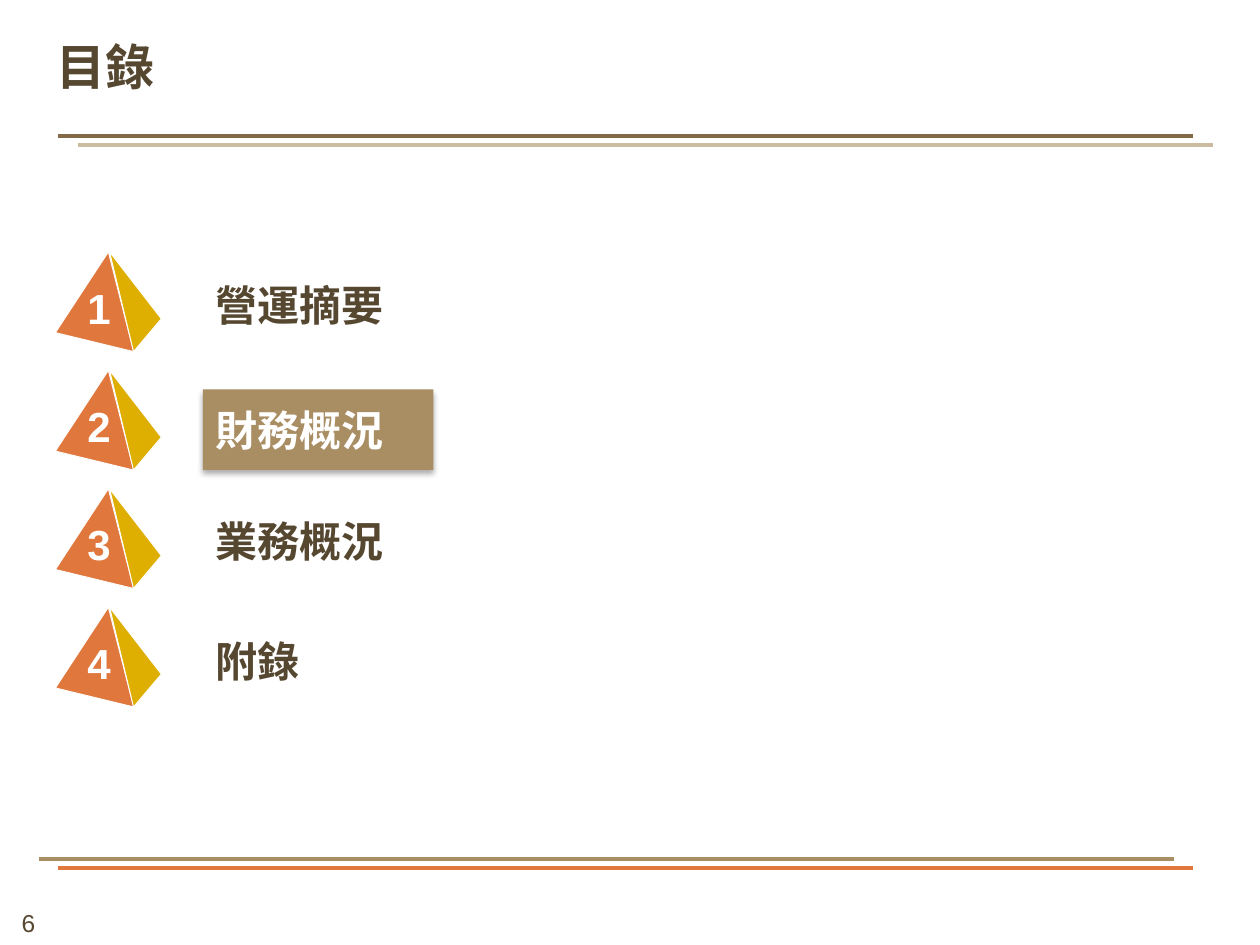
from lxml.etree import SubElement
from pptx import Presentation
from pptx.dml.color import RGBColor
from pptx.enum.shapes import MSO_CONNECTOR, MSO_SHAPE
from pptx.enum.text import MSO_ANCHOR, MSO_AUTO_SIZE, PP_ALIGN
from pptx.oxml.ns import qn
from pptx.util import Inches, Pt

DARK, TAN, ORANGE, GOLD, WHITE = "564730", "A98D63", "E0773C", "DEAE00", "FFFFFF"
CHINESE, LATIN = "Noto Sans CJK SC", "Arial"


def color(value):
    """Return the colour for a hex string."""
    return RGBColor.from_string(value)


class AgendaSlide:
    """Hold the agenda style and the slide being built."""

    def __init__(self, deck):
        """Add a slide with a title placeholder."""
        self.slide = deck.slides.add_slide(deck.slide_layouts[5])
        self.shapes = self.slide.shapes

    def set_text(self, shape, text, size, ink, font=CHINESE, bold=True,
                 align=PP_ALIGN.LEFT, anchor=MSO_ANCHOR.MIDDLE, margins=(0, 0), spacing=None):
        """Put one formatted paragraph into a shape."""
        frame = shape.text_frame
        frame.auto_size = MSO_AUTO_SIZE.NONE
        frame.word_wrap = True
        frame.vertical_anchor = anchor
        frame.margin_left = frame.margin_right = Inches(margins[0])
        frame.margin_top = frame.margin_bottom = Inches(margins[1])
        paragraph = frame.paragraphs[0]
        paragraph.text = text
        paragraph.alignment = align
        paragraph.line_spacing = spacing
        paragraph.font.size = Pt(size)
        paragraph.font.bold = bold
        paragraph.font.name = font
        paragraph.font.color.rgb = color(ink)
        properties = paragraph._p.pPr.find(qn("a:defRPr"))
        SubElement(properties, qn("a:ea")).set("typeface", font)

    def title(self, text):
        """Place and fill the title."""
        title = self.shapes.title
        title.left, title.top = Inches(0.45), Inches(0.25)
        title.width, title.height = Inches(9.41), Inches(0.51)
        self.set_text(title, text, 28, DARK, anchor=MSO_ANCHOR.BOTTOM, spacing=Pt(40))

    def rule(self, left, top, ink):
        """Draw a horizontal rule."""
        line = self.shapes.add_connector(
            MSO_CONNECTOR.STRAIGHT, Inches(left), Inches(top), Inches(left + 9.01), Inches(top))
        line.line.color.rgb = color(ink)
        line.line.width = Pt(2.25)
        SubElement(line._element.spPr, qn("a:effectLst"))

    def page_number(self, text):
        """Show the page number."""
        box = self.shapes.add_textbox(Inches(-0.17), Inches(7.16), Inches(0.79), Inches(0.34))
        self.set_text(box, text, 14, DARK, LATIN, False, PP_ALIGN.CENTER,
                      MSO_ANCHOR.TOP, (0.1, 0.05))

    def face(self, group, points, top, fill):
        """Draw one triangular face of a pyramid."""
        corners = [(Inches(x), Inches(top + y)) for x, y in points]
        builder = group.shapes.build_freeform(*corners[0])
        builder.add_line_segments(corners[1:])
        face = builder.convert_to_shape()
        face.shadow.inherit = False
        face.fill.solid()
        face.fill.fore_color.rgb = color(fill)
        face.line.color.rgb = color(WHITE)
        face.line.width = Pt(0.5)

    def pyramid(self, number, top):
        """Draw a numbered pyramid."""
        group = self.shapes.add_group_shape()
        self.face(group, [(0.86, 0), (0.44, 0.64), (1.06, 0.79)], top, ORANGE)
        self.face(group, [(0.87, 0), (1.28, 0.53), (1.06, 0.79)], top, GOLD)
        box = group.shapes.add_textbox(
            Inches(0.69), Inches(top + 0.3), Inches(0.19), Inches(0.34))
        self.set_text(box, str(number), 24, WHITE, LATIN, align=PP_ALIGN.CENTER, spacing=0.85)

    def label(self, text, top):
        """Add a plain agenda entry."""
        box = self.shapes.add_textbox(Inches(1.61), Inches(top), Inches(2.42), Inches(0.64))
        self.set_text(box, text, 24, DARK, margins=(0.1, 0.05))

    def current_label(self, text, top):
        """Add the highlighted agenda entry."""
        box = self.shapes.add_shape(
            MSO_SHAPE.RECTANGLE, Inches(1.61), Inches(top), Inches(1.83), Inches(0.64))
        box.fill.solid()
        box.fill.fore_color.rgb = color(TAN)
        box.line.fill.background()
        box.shadow.inherit = False
        effects = box._element.spPr.find(qn("a:effectLst"))
        shadow = SubElement(effects, qn("a:outerShdw"), blurRad=str(Pt(3.5)),
                            dist=str(Pt(2.2)), dir="5400000", rotWithShape="0")
        ink = SubElement(shadow, qn("a:srgbClr"), val="000000")
        SubElement(ink, qn("a:alpha"), val="32000")
        self.set_text(box, text, 24, WHITE, margins=(0.1, 0.05))


def main():
    """Build and save the agenda slide."""
    deck = Presentation()
    deck.slide_width, deck.slide_height = Inches(10), Inches(7.5)
    page = AgendaSlide(deck)
    page.title("目錄")
    for left, top, ink in [(0.46, 6.89, ORANGE), (0.31, 6.82, TAN),
                           (0.62, 1.15, "CBBBA1"), (0.46, 1.08, "826A47")]:
        page.rule(left, top, ink)
    page.page_number("6")

    entries = [("營運摘要", 2.1, page.label), ("財務概況", 3.09, page.current_label),
               ("業務概況", 3.97, page.label), ("附錄", 4.92, page.label)]
    for index, (text, top, draw_label) in enumerate(entries):
        page.pyramid(index + 1, 2 + 0.94 * index)
        draw_label(text, top)
    deck.save("out.pptx")


if __name__ == "__main__":
    main()
